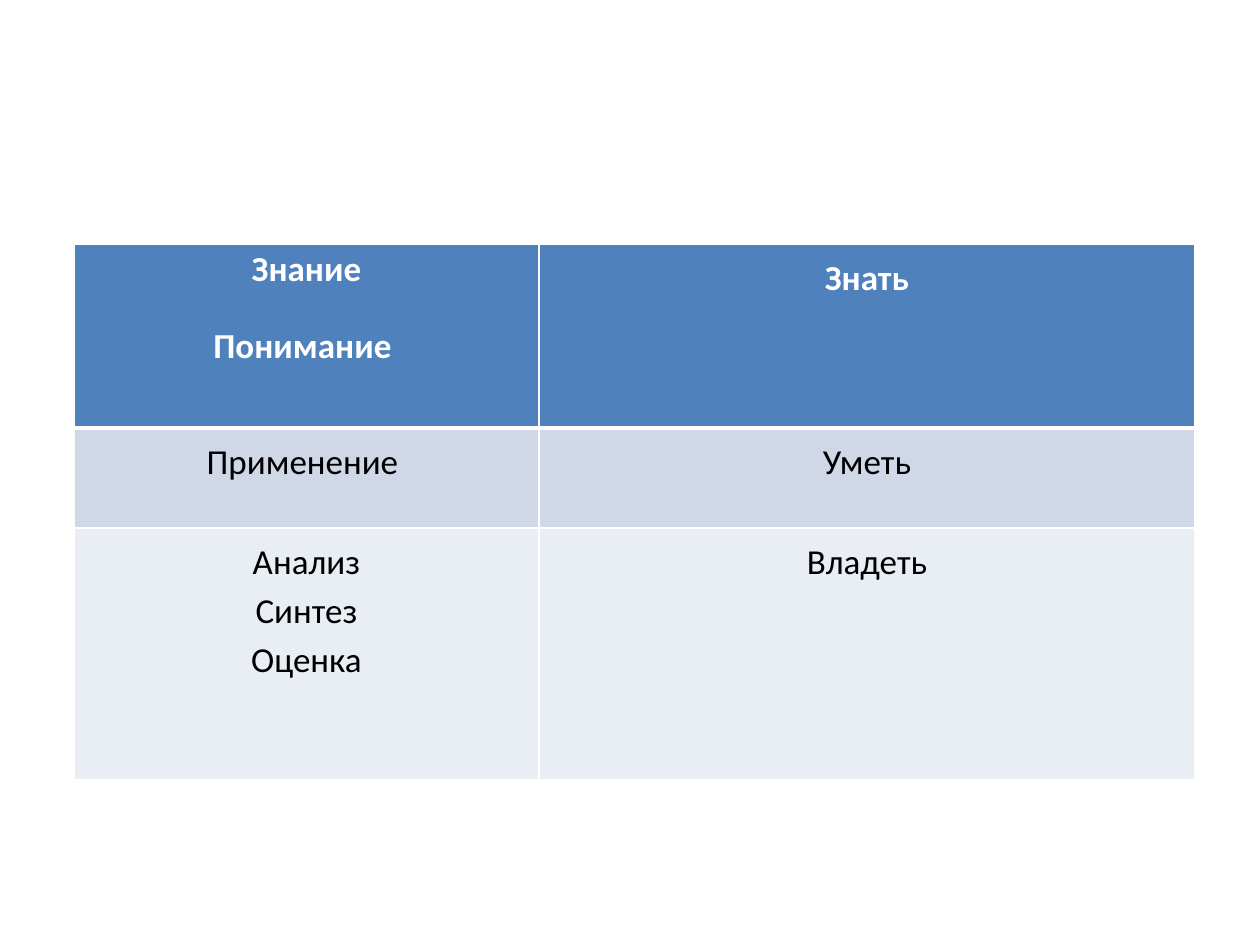
from lxml import etree
from pptx import Presentation
from pptx import util as u
from pptx.dml.color import RGBColor
from pptx.enum import text
from pptx.oxml import ns

PX = 914400 / 126
WHITE = RGBColor(0xFF, 0xFF, 0xFF)
BLACK = RGBColor(0, 0, 0)
HEADER_FILL = RGBColor(0x4F, 0x81, 0xBD)
BAND_FILL = RGBColor(0xD0, 0xD8, 0xE8)
LIGHT_FILL = RGBColor(0xE9, 0xED, 0xF4)

COLUMN_WIDTHS = [465, 656]
# Height, fill and cell paragraphs of each row
ROWS = [
    (184, HEADER_FILL, [["Знание", "Понимание "], ["Знать"]]),
    (100, BAND_FILL, [["Применение "], ["Уметь"]]),
    (252, LIGHT_FILL, [["Анализ", "Синтез", "Оценка"], ["Владеть"]]),
]


def px(length):
    return u.Emu(round(length * PX))


def set_borders(cell, header, below_header):
    properties = cell._tc.get_or_add_tcPr()
    thick_sides = {"lnB": header, "lnT": below_header}
    for index, side in enumerate(("lnL", "lnR", "lnT", "lnB")):
        width = u.Pt(3 if thick_sides.get(side) else 1)
        line = etree.Element(ns.qn("a:" + side), w=str(width))
        fill = etree.SubElement(line, ns.qn("a:solidFill"))
        etree.SubElement(fill, ns.qn("a:srgbClr"), val=str(WHITE))
        properties.insert(index, line)


presentation = Presentation()
presentation.slide_width = px(1260)
presentation.slide_height = px(945)
slide = presentation.slides.add_slide(presentation.slide_layouts[6])

# Table of learning levels and outcomes
frame = slide.shapes.add_table(
    len(ROWS), len(COLUMN_WIDTHS), px(74), px(244),
    px(sum(COLUMN_WIDTHS)), px(sum(row[0] for row in ROWS)))
table = frame.table
for column, width in zip(table.columns, COLUMN_WIDTHS):
    column.width = px(width)

for row_index, (height, fill_color, row_texts) in enumerate(ROWS):
    table.rows[row_index].height = px(height)
    header = row_index == 0
    for column_index, lines in enumerate(row_texts):
        cell = table.cell(row_index, column_index)
        cell.fill.solid()
        cell.fill.fore_color.rgb = fill_color
        set_borders(cell, header, row_index == 1)
        cell.text = "\n".join(lines)
        tight = header and column_index == 0
        for paragraph in cell.text_frame.paragraphs:
            paragraph.alignment = text.PP_ALIGN.CENTER
            paragraph.line_spacing = 0.9 if tight else 1.15
            paragraph.font.name = "Calibri"
            paragraph.font.size = u.Pt(20)
            paragraph.font.bold = header
            paragraph.font.color.rgb = WHITE if header else BLACK
        # One line of space between the two header levels
        if tight:
            cell.text_frame.paragraphs[1].space_before = u.Pt(22)

presentation.save("out.pptx")
